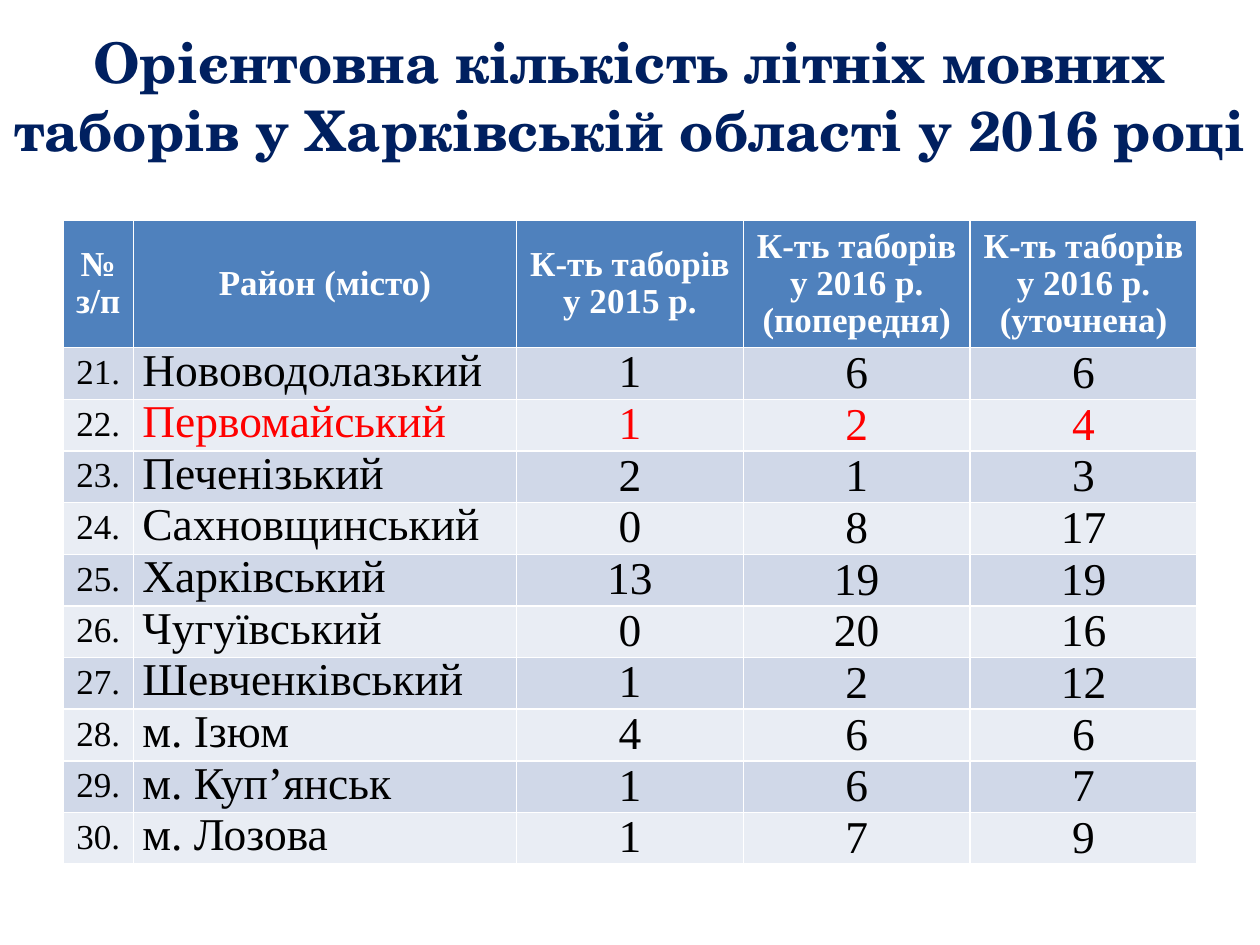
from pptx import Presentation
from pptx.dml.color import RGBColor
from pptx.enum import text
from pptx.util import Inches, Pt

# Content
TITLE = "Орієнтовна кількість літніх мовних таборів у Харківській області у 2016 році"
HEADINGS = [
    "№ з/п",
    "Район (місто)",
    "К-ть таборів у 2015 р.",
    "К-ть таборів у 2016 р. (попередня)",
    "К-ть таборів у 2016 р. (уточнена)",
]
FIRST_NUMBER = 21
DISTRICTS = [
    ("Нововодолазький", 1, 6, 6),
    ("Первомайський", 1, 2, 4),
    ("Печенізький", 2, 1, 3),
    ("Сахновщинський", 0, 8, 17),
    ("Харківський", 13, 19, 19),
    ("Чугуївський", 0, 20, 16),
    ("Шевченківський", 1, 2, 12),
    ("м. Ізюм", 4, 6, 6),
    ("м. Куп’янськ", 1, 6, 7),
    ("м. Лозова", 1, 7, 9),
]
HIGHLIGHTED = "Первомайський"

# Formats
COLUMN_WIDTHS = [0.56, 3.04, 1.8, 1.8, 1.8]
HEADER_HEIGHT, ROW_HEIGHT = 1.01, 0.41
HEADER_FILL, BAND_FILLS = "4F81BD", ("D0D8E8", "E9EDF4")
TABLE_FONT = "Times New Roman"
CENTER, LEFT = text.PP_ALIGN.CENTER, text.PP_ALIGN.LEFT
MIDDLE, TOP = text.MSO_ANCHOR.MIDDLE, text.MSO_ANCHOR.TOP
WIDE, NARROW, TIGHT = (0.1, 0.05, 0.1, 0.05), (0.07, 0, 0.07, 0), (0.01, 0.01, 0.01, 0)
# Per column: size, alignment, anchor, margins (left, top, right, bottom)
COLUMN_FORMATS = [
    (20, CENTER, MIDDLE, WIDE),
    (26, LEFT, TOP, NARROW),
    (26, CENTER, MIDDLE, NARROW),
    (26, CENTER, MIDDLE, TIGHT),
    (26, CENTER, MIDDLE, TIGHT),
]


def rgb(value):
    return RGBColor.from_string(value)


def set_font(font, color, **values):
    for name, value in values.items():
        setattr(font, name, value)
    font.color.rgb = rgb(color)


def fill_cell(cell, words, fill, color, cell_format, bold=False):
    size, alignment, anchor, margins = cell_format
    cell.fill.solid()
    cell.fill.fore_color.rgb = rgb(fill)
    cell.vertical_anchor = anchor
    for side, margin in zip(("left", "top", "right", "bottom"), margins):
        setattr(cell, f"margin_{side}", Inches(margin))
    paragraph = cell.text_frame.paragraphs[0]
    paragraph.alignment = alignment
    paragraph.line_spacing = 0.95
    run = paragraph.add_run()
    run.text = str(words)
    set_font(run.font, color, name=TABLE_FONT, size=Pt(size), bold=bold)


def main():
    deck = Presentation()
    deck.slide_width, deck.slide_height = Inches(10), Inches(7.5)
    slide = deck.slides.add_slide(deck.slide_layouts[5])

    # Title
    title = slide.shapes.title
    title.left, title.top = Inches(0), Inches(0.13)
    title.width, title.height = Inches(10), Inches(1.25)
    title.text_frame.vertical_anchor = MIDDLE
    heading = title.text_frame.paragraphs[0]
    heading.alignment = CENTER
    run = heading.add_run()
    run.text = TITLE
    set_font(run.font, "002060", name="TeX Gyre Schola", size=Pt(32), bold=True)

    # Table grid
    table_height = HEADER_HEIGHT + ROW_HEIGHT * len(DISTRICTS)
    camps = slide.shapes.add_table(
        len(DISTRICTS) + 1, len(HEADINGS),
        Inches(0.5), Inches(1.75), Inches(sum(COLUMN_WIDTHS)), Inches(table_height),
    ).table
    for column, width in zip(camps.columns, COLUMN_WIDTHS):
        column.width = Inches(width)
    for index, row in enumerate(camps.rows):
        row.height = Inches(ROW_HEIGHT if index else HEADER_HEIGHT)

    # Header row
    for col, words in enumerate(HEADINGS):
        fill_cell(camps.cell(0, col), words, HEADER_FILL, "FFFFFF",
                  (20, CENTER, MIDDLE, WIDE), bold=True)

    # District rows
    for index, district in enumerate(DISTRICTS):
        values = (f"{FIRST_NUMBER + index}.", *district)
        for col, (words, cell_format) in enumerate(zip(values, COLUMN_FORMATS)):
            marked = district[0] == HIGHLIGHTED and col > 0
            fill_cell(camps.cell(index + 1, col), words, BAND_FILLS[index % 2],
                      "FF0000" if marked else "000000", cell_format)

    deck.save("out.pptx")


if __name__ == "__main__":
    main()
